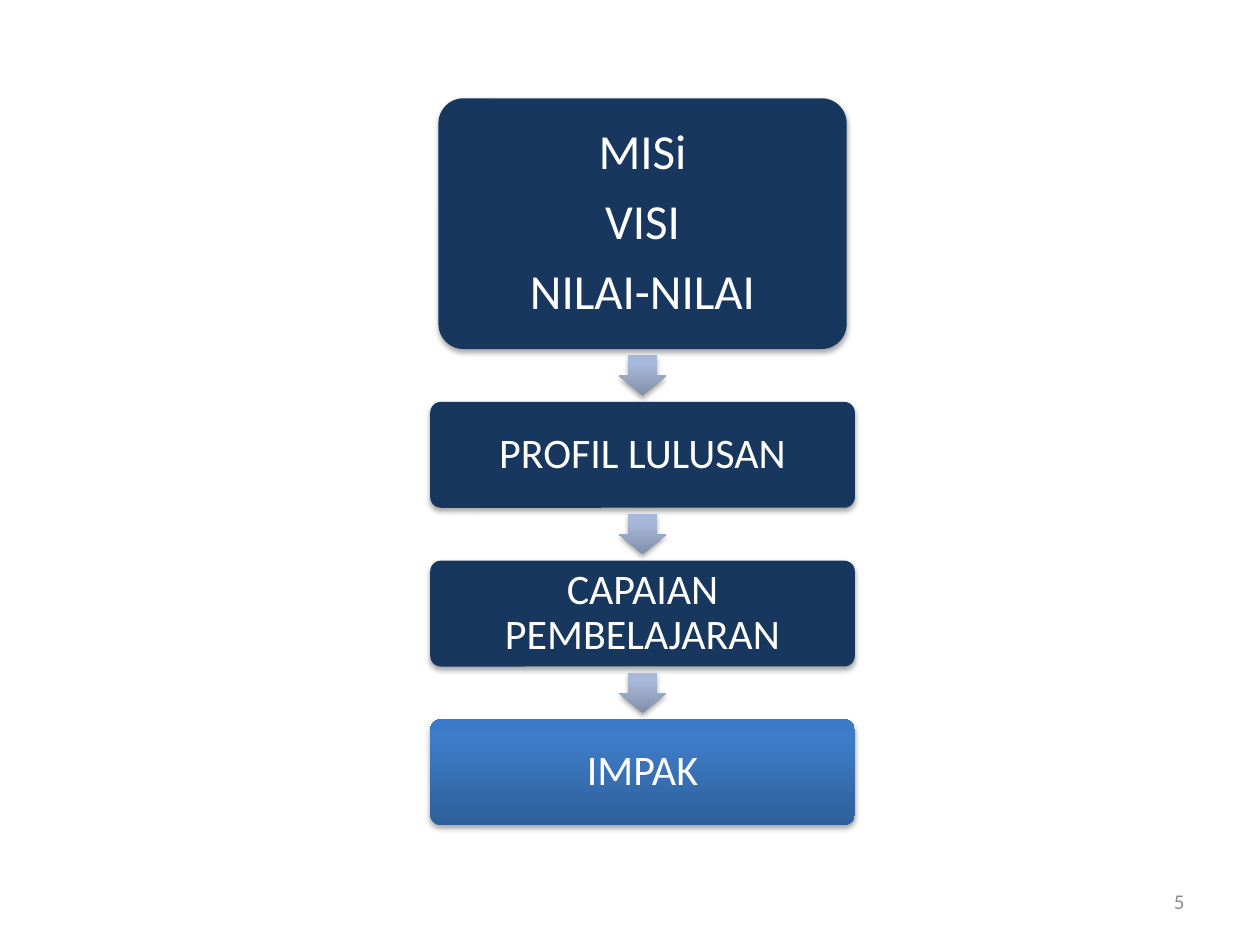
"""Build a slide with a vertical flow from mission to impact."""
from lxml.etree import SubElement
from pptx import Presentation
from pptx.dml.color import RGBColor
from pptx.enum.shapes import MSO_SHAPE
from pptx.enum.text import MSO_ANCHOR, PP_ALIGN
from pptx.oxml.ns import qn
from pptx.util import Inches, Pt

NAVY = RGBColor(0x17, 0x37, 0x5E)
WHITE = RGBColor(0xFF, 0xFF, 0xFF)
GRAY = RGBColor(0x8C, 0x8C, 0x8C)
BLACK = RGBColor(0, 0, 0)
BLUES = [(0, RGBColor(0x2F, 0x5F, 0x99)), (80, RGBColor(0x3D, 0x7C, 0xC7)),
         (100, RGBColor(0x3A, 0x7C, 0xCB))]
PALES = [(0, RGBColor(0x81, 0x8F, 0xA8)), (80, RGBColor(0xA7, 0xB9, 0xDA)),
         (100, RGBColor(0xA7, 0xBA, 0xDC))]

BIG = {"width": 3.24, "height": 1.99, "size": 28, "inset": 0.12}
SMALL = {"width": 3.37, "height": 0.84, "size": 24, "inset": 0.1}
STEPS = [
    (["MISi", "VISI", "NILAI-NILAI"], BIG, NAVY),
    (["PROFIL LULUSAN"], SMALL, NAVY),
    (["CAPAIAN PEMBELAJARAN"], SMALL, NAVY),
    (["IMPAK"], SMALL, BLUES),
]
PAGE = "5"
MID, TOP, GAP = 5.1, 0.78, 0.42
ARROW = (0.32, 0.38)


def add(parent, tag, **attrs):
    return SubElement(parent, qn(tag), {k: str(v) for k, v in attrs.items()})


def paint(shape, fill):
    if isinstance(fill, RGBColor):
        shape.fill.solid()
        shape.fill.fore_color.rgb = fill
    else:
        shape.fill.gradient()
        grad = shape.element.spPr.find(qn("a:gradFill"))
        grad.set("rotWithShape", "0")
        for child in list(grad):
            grad.remove(child)
        stops = add(grad, "a:gsLst")
        for pos, color in fill:
            add(add(stops, "a:gs", pos=pos * 1000), "a:srgbClr", val=color)
        add(grad, "a:lin", ang=270 * 60000, scaled=0)
    shape.line.fill.background()
    shape.shadow.inherit = False
    glow = add(shape.element.spPr.find(qn("a:effectLst")), "a:outerShdw",
               blurRad=Pt(3.1), dist=Pt(1.8), dir=90 * 60000, rotWithShape=0)
    add(add(glow, "a:srgbClr", val=BLACK), "a:alpha", val=35000)


def place(slide, kind, mid, width, height, fill):
    shape = slide.shapes.add_shape(
        kind, Inches(MID - width / 2), Inches(mid - height / 2),
        Inches(width), Inches(height))
    paint(shape, fill)
    return shape


def write(frame, lines, size, color, align, inset=None, **format):
    frame.word_wrap = True
    frame.vertical_anchor = MSO_ANCHOR.MIDDLE
    if inset:
        for side in ("left", "right", "top", "bottom"):
            setattr(frame, f"margin_{side}", Inches(inset))
    for i, line in enumerate(lines):
        para = frame.add_paragraph() if i else frame.paragraphs[0]
        para.text = line
        for name, value in {"alignment": align, **format}.items():
            setattr(para, name, value)
        for name, value in {"name": "Calibri", "size": Pt(size)}.items():
            setattr(para.font, name, value)
        para.font.color.rgb = color


def main():
    deck = Presentation()
    deck.slide_width, deck.slide_height = Inches(10), Inches(7.5)
    slide = deck.slides.add_slide(deck.slide_layouts[6])
    top = TOP
    for i, (lines, style, fill) in enumerate(STEPS):
        if i:
            arrow = place(slide, MSO_SHAPE.RIGHT_ARROW, top - GAP / 2, *ARROW, PALES)
            arrow.rotation = 90
            arrow.adjustments[0] = 0.6
        height, size = style["height"], style["size"]
        box = place(slide, MSO_SHAPE.ROUNDED_RECTANGLE, top + height / 2,
                    style["width"], height, fill)
        box.adjustments[0] = 0.1
        write(box.text_frame, lines, size, WHITE, PP_ALIGN.CENTER, style["inset"],
              line_spacing=0.9, space_after=Pt(0.35 * size))
        top += height + GAP
    page = slide.shapes.add_textbox(Inches(7.17), Inches(6.95), Inches(2.33), Inches(0.4))
    write(page.text_frame, [PAGE], 12, GRAY, PP_ALIGN.RIGHT)
    deck.save("out.pptx")


if __name__ == "__main__":
    main()
